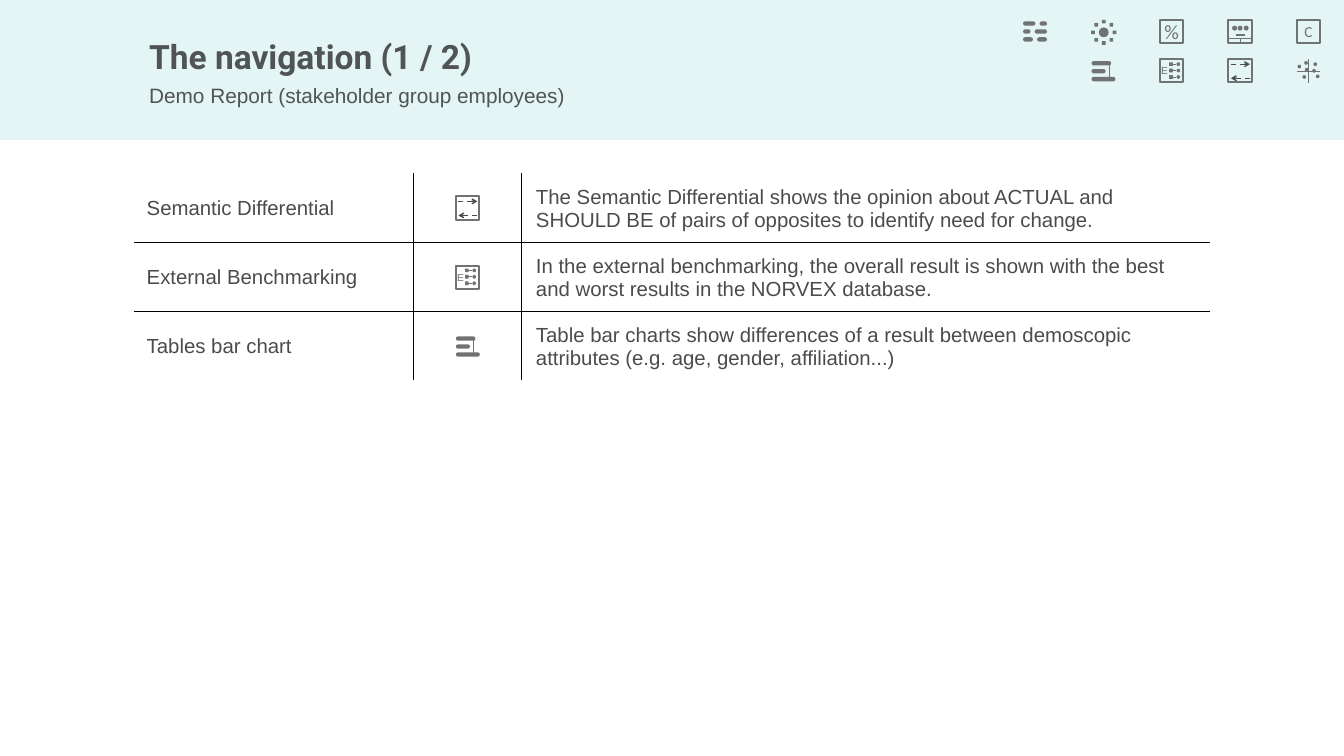
from math import cos, pi, sin

from lxml import etree
from pptx import Presentation
from pptx.dml.color import RGBColor
from pptx.enum.dml import MSO_LINE
from pptx.enum.shapes import MSO_CONNECTOR, MSO_SHAPE
from pptx.enum.text import MSO_ANCHOR, MSO_AUTO_SIZE, PP_ALIGN
from pptx.oxml.ns import qn
from pptx.util import Inches, Pt

RECT, OVAL, PILL = MSO_SHAPE.RECTANGLE, MSO_SHAPE.OVAL, MSO_SHAPE.ROUNDED_RECTANGLE
STRAIGHT, DASH = MSO_CONNECTOR.STRAIGHT, MSO_LINE.DASH
TOP, MIDDLE = MSO_ANCHOR.TOP, MSO_ANCHOR.MIDDLE
LEFT, CENTER = PP_ALIGN.LEFT, PP_ALIGN.CENTER

# Content
HEADING = [  # text, font, size, bold, space before
    ("The navigation (1 / 2)", "Roboto", 39.5, True, 12.2),
    ("Demo Report (stakeholder group employees)", "Arial", 24.5, False, 7.2),
]
TOPICS = [
    ("Semantic Differential", "differential",
     "The Semantic Differential shows the opinion about ACTUAL and SHOULD BE "
     "of pairs of opposites to identify need for change."),
    ("External Benchmarking", "benchmark",
     "In the external benchmarking, the overall result is shown with the best "
     "and worst results in the NORVEX database."),
    ("Tables bar chart", "bars",
     "Table bar charts show differences of a result between demoscopic "
     "attributes (e.g. age, gender, affiliation...)"),
]
MENU = [
    ["list", "sun", "percent", "keypad", "letter"],
    [None, "bars", "benchmark", "differential", "scatter"],
]
LIST_PILLS = [  # (left, width) pairs of each row
    [(0, 0.20), (0.27, 0.12)], [(0, 0.12), (0.19, 0.20)], [(0, 0.16), (0.23, 0.16)],
]
BAR_WIDTHS = [0.32, 0.23, 0.39]
SCATTER_DOTS = [(0.01, 0.09), (0.13, 0.14), (0.27, 0.05), (0.31, 0.25),
                (0.09, 0.26), (0.12, 0.03), (0.25, 0.16)]

# Layout
ICON, PILL_TOP, PILL_STEP = 0.38, 0.03, 0.13
MENU_LEFT, MENU_TOP, MENU_DX, MENU_DY = 16.74, 0.32, 1.12, 0.65
TABLE_LEFT, TABLE_TOP, ROW_H = 2.2, 2.84, 1.13
COLUMN_W = [4.57, 1.76, 11.26]
GREY, TEXT, TITLE, BLACK, TEAL = "707274", "494C4D", "515455", "000000", "49C0B6"


def color(value):
    return RGBColor.from_string(value)


def style(paragraph, font, size, hue, bold=False):
    for run in paragraph.runs:
        run.font.name, run.font.size, run.font.bold = font, Pt(size), bold
        run.font.color.rgb = color(hue)


class Icon:
    """A group drawn in coordinates relative to the icon's corner."""

    def __init__(self, slide, kind, left, top):
        self.shapes = slide.shapes.add_group_shape().shapes
        self.left, self.top = left, top
        getattr(self, kind)()

    def at(self, x, y):
        return Inches(self.left + x), Inches(self.top + y)

    def solid(self, preset, x, y, w, h):
        part = self.shapes.add_shape(preset, *self.at(x, y), Inches(w), Inches(h))
        part.shadow.inherit = False
        part.fill.solid()
        part.fill.fore_color.rgb = color(GREY)
        part.line.fill.background()
        return part

    def pill(self, x, row, w):
        part = self.solid(PILL, x, PILL_TOP + row * PILL_STEP, w, 0.07)
        part.adjustments[0] = 0.5

    def frame(self):
        part = self.solid(RECT, 0, 0, ICON, ICON)
        part.fill.background()
        part.line.color.rgb = color(GREY)
        part.line.width = Pt(2.36)

    def stroke(self, x1, y1, x2, y2, width=0.87, hue=GREY):
        line = self.shapes.add_connector(STRAIGHT, *self.at(x1, y1), *self.at(x2, y2))
        line.line.color.rgb = color(hue)
        line.line.width = Pt(width)
        etree.SubElement(line.element.spPr, qn("a:effectLst"))
        return line

    def arrow(self, x1, x2, y):
        line = self.stroke(x1, y, x2, y, 1.5, TEXT).line
        line.dash_style = DASH
        etree.SubElement(line._get_or_add_ln(), qn("a:tailEnd"), type="arrow")

    def label(self, text, font, size, width=ICON):
        box = self.shapes.add_textbox(*self.at(0, 0), Inches(width), Inches(ICON))
        frame = box.text_frame
        frame.margin_left = frame.margin_right = frame.margin_top = frame.margin_bottom = 0
        frame.vertical_anchor = MIDDLE
        frame.word_wrap = True
        frame.text = text
        frame.paragraphs[0].alignment = CENTER
        style(frame.paragraphs[0], font, size, GREY)

    def list(self):
        for row, pills in enumerate(LIST_PILLS):
            for x, w in pills:
                self.pill(x, row, w)

    def sun(self):
        cx, cy, radius = 0.2, 0.21, 0.175
        self.solid(OVAL, cx - 0.08, cy - 0.08, 0.16, 0.16)
        for ray in range(8):
            x, y = cx + radius * cos(ray * pi / 4), cy + radius * sin(ray * pi / 4)
            self.solid(RECT, x - 0.03, y - 0.03, 0.06, 0.06)

    def percent(self):
        self.frame()
        self.label("%", "Calibri", 24)

    def letter(self):
        self.frame()
        self.label("C", "Calibri", 18)

    def keypad(self):
        self.frame()
        self.stroke(0, 0.31, ICON, 0.31)
        self.stroke(0.19, 0.31, 0.19, 0.39)
        for x in (0.06, 0.15, 0.25):
            self.solid(OVAL, x, 0.1, 0.08, 0.08)
        self.stroke(0.12, 0.26, 0.27, 0.26, 2.36)

    def bars(self):
        for row, w in enumerate(BAR_WIDTHS):
            self.pill(0, row, w)
        self.stroke(0.29, 0.06, 0.29, 0.32, 0.82)

    def benchmark(self):
        self.frame()
        self.label("E", "Arial", 12, 0.15)
        for row in range(3):
            y = 0.05 + row * 0.105
            self.solid(RECT, 0.15, y, 0.06, 0.06)
            self.stroke(0.2, y + 0.03, 0.26, y + 0.03)
            self.solid(OVAL, 0.27, y, 0.06, 0.06)

    def differential(self):
        self.frame()
        self.arrow(0.04, 0.35, 0.08)
        self.arrow(0.35, 0.04, 0.31)

    def scatter(self):
        for x, y in SCATTER_DOTS:
            self.solid(OVAL, x, y, 0.06, 0.06)
        self.stroke(0, 0.19, ICON, 0.19, 0.82)
        self.stroke(0.19, 0, 0.19, ICON, 0.82)


def add_heading(slide, width):
    title = slide.shapes.title
    title.left, title.top, title.width, title.height = map(Inches, (2.44, 0.42, 14.22, 1.35))
    frame = title.text_frame
    frame.margin_left = frame.margin_right = frame.margin_bottom = 0
    frame.margin_top = Inches(0.17)
    frame.vertical_anchor, frame.auto_size = TOP, MSO_AUTO_SIZE.NONE
    frame.text = "\n".join(line[0] for line in HEADING)
    for paragraph, (_, font, size, bold, before) in zip(frame.paragraphs, HEADING):
        paragraph.alignment, paragraph.space_before = LEFT, Pt(before)
        style(paragraph, font, size, TITLE, bold)

    # Tinted band behind the title
    band = slide.shapes.add_shape(RECT, 0, 0, width, Inches(2.29))
    band.shadow.inherit = False
    band.fill.solid()
    band.fill.fore_color.rgb = color(TEAL)
    band.line.fill.background()
    tint = band.element.spPr.find(".//" + qn("a:srgbClr"))
    etree.SubElement(tint, qn("a:alpha"), val="15000")
    title.element.addprevious(band.element)


def add_borders(cell, sides):
    for position, side in enumerate(sides):
        border = etree.Element(qn("a:" + side), w=str(Pt(0.75)))
        fill = etree.SubElement(border, qn("a:solidFill"))
        etree.SubElement(fill, qn("a:srgbClr"), val=BLACK)
        cell._tc.get_or_add_tcPr().insert(position, border)


def add_topics(slide):
    last_row, last_column = len(TOPICS) - 1, len(COLUMN_W) - 1
    table = slide.shapes.add_table(
        len(TOPICS), len(COLUMN_W), Inches(TABLE_LEFT), Inches(TABLE_TOP),
        Inches(sum(COLUMN_W)), Inches(ROW_H * len(TOPICS))).table
    table.first_row = table.horz_banding = False
    for column, width in zip(table.columns, COLUMN_W):
        column.width = Inches(width)
    for r, (name, icon, description) in enumerate(TOPICS):
        table.rows[r].height = Inches(ROW_H)
        for c, text in enumerate((name, "", description)):
            cell = table.cell(r, c)
            cell.fill.background()
            cell.vertical_anchor = MIDDLE
            cell.margin_left = Inches(0.24 if c == last_column else 0.2)
            cell.margin_right = Inches(0.71 if c == last_column else 0)
            cell.margin_top, cell.margin_bottom = Inches(0.02), 0
            cell.text = text
            cell.text_frame.paragraphs[0].space_before = Pt(1.2)
            style(cell.text_frame.paragraphs[0], "Arial", 24, TEXT)
            edges = {"lnL": c > 0, "lnR": c < last_column, "lnT": r > 0, "lnB": r < last_row}
            add_borders(cell, [side for side, shown in edges.items() if shown])
        Icon(slide, icon, TABLE_LEFT + COLUMN_W[0] + (COLUMN_W[1] - ICON) / 2,
             TABLE_TOP + r * ROW_H + (ROW_H - ICON) / 2)


def main():
    deck = Presentation()
    deck.slide_width, deck.slide_height = Inches(21.99), Inches(12.37)
    slide = deck.slides.add_slide(deck.slide_layouts[5])
    add_heading(slide, deck.slide_width)
    for r, icons in enumerate(MENU):
        for c, icon in enumerate(icons):
            if icon:
                Icon(slide, icon, MENU_LEFT + c * MENU_DX, MENU_TOP + r * MENU_DY)
    add_topics(slide)
    deck.save("out.pptx")


if __name__ == "__main__":
    main()
